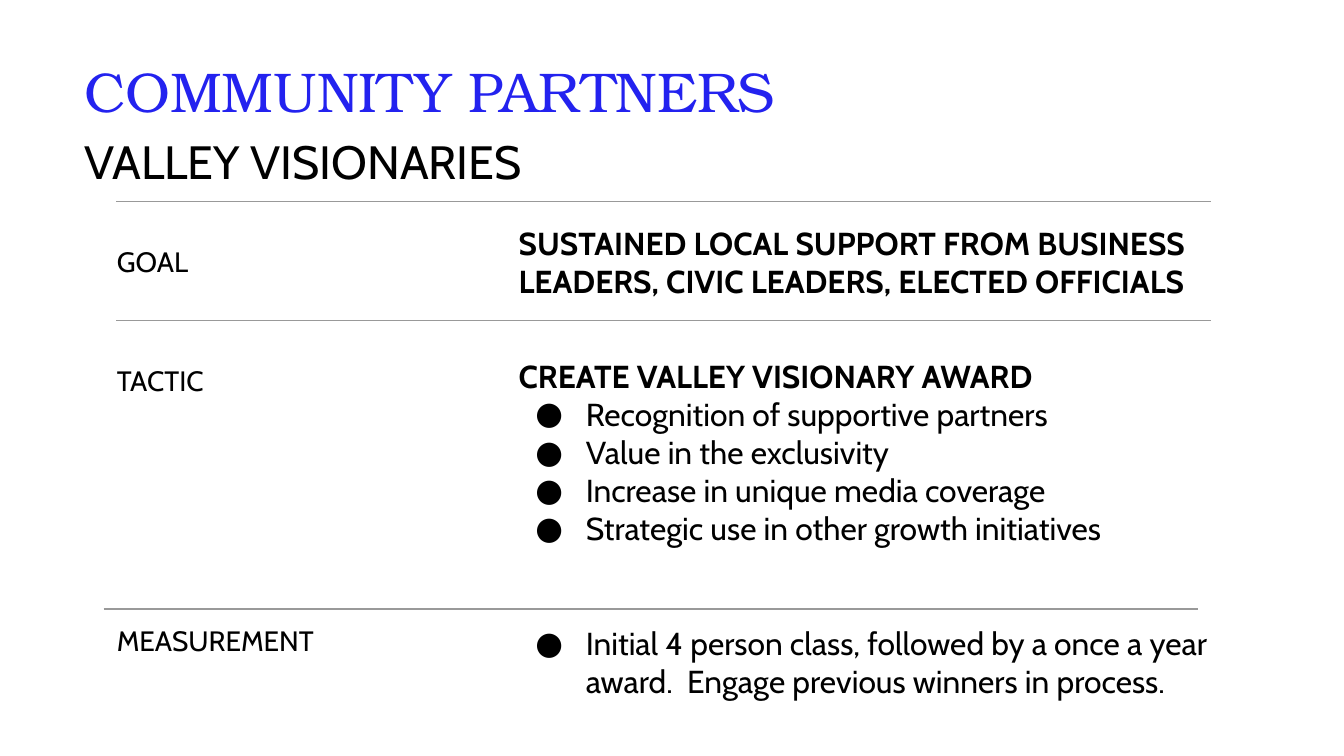
from lxml import etree
from pptx import Presentation
from pptx.dml.color import RGBColor
from pptx.enum.shapes import MSO_CONNECTOR
from pptx.enum.text import MSO_ANCHOR, MSO_AUTO_SIZE, PP_ALIGN
from pptx.oxml.ns import qn
from pptx.util import Emu, Pt

STRAIGHT = MSO_CONNECTOR.STRAIGHT
TOP = MSO_ANCHOR.TOP
LEFT = PP_ALIGN.LEFT
NO_AUTOFIT = MSO_AUTO_SIZE.NONE

BLACK = RGBColor(0x00, 0x00, 0x00)
BLUE = RGBColor(0x23, 0x22, 0xEF)
GREY = RGBColor(0x99, 0x99, 0x99)
BODY_FONT = "Cabin"
TITLE_FONT = "TeX Gyre Bonum"
BULLET_FONT = "Cabin"

LABEL_X, DETAIL_X = 74, 361
LABEL_SIZE, DETAIL_SIZE = 15, 17
RULE_WIDTH = 782
INSET = Pt(7.2)


def px(n):
    """Turn px, 96 to the inch, into EMU."""
    return Emu(n * 9525)


def place(sp, x, y, w, h):
    """Set a text shape's box, with even insets and text from the top."""
    sp.left, sp.top, sp.width, sp.height = px(x), px(y), px(w), px(h)
    tf = sp.text_frame
    tf.word_wrap = True
    tf.auto_size = NO_AUTOFIT
    tf.vertical_anchor = TOP
    tf.margin_left = tf.margin_right = tf.margin_top = tf.margin_bottom = INSET
    return tf


def add_bullet(p):
    pPr = p._p.get_or_add_pPr()
    pPr.set("marL", str(px(48)))
    pPr.set("indent", str(-px(36)))
    color = etree.SubElement(pPr, qn("a:buClr"))
    etree.SubElement(color, qn("a:srgbClr"), val=str(BLACK))
    etree.SubElement(pPr, qn("a:buFont"), typeface=BULLET_FONT)
    etree.SubElement(pPr, qn("a:buChar"), char="●")


def write(p, text, size, font=BODY_FONT, color=BLACK, bold=False):
    p.alignment = LEFT
    r = p.add_run()
    r.text = text
    r.font.name = font
    r.font.size = Pt(size)
    r.font.bold = bold
    r.font.color.rgb = color


def add_text(s, box, text, size):
    tf = place(s.shapes.add_textbox(0, 0, 0, 0), *box)
    write(tf.paragraphs[0], text, size)


def add_detail(s, y, w, h, heading=None, bullets=()):
    """Add a bold heading, bullets, or both in the right column."""
    tf = place(s.shapes.add_textbox(0, 0, 0, 0), DETAIL_X, y, w, h)
    p = tf.paragraphs[0]
    if heading:
        write(p, heading, DETAIL_SIZE, bold=True)
    for i, text in enumerate(bullets):
        if heading or i:
            p = tf.add_paragraph()
        add_bullet(p)
        write(p, text, DETAIL_SIZE)


def add_rule(s, x, y):
    line = s.shapes.add_connector(STRAIGHT, px(x), px(y), px(x + RULE_WIDTH), px(y))
    line.line.color.rgb = GREY
    line.line.width = Pt(0.75)
    etree.SubElement(line._element.spPr, qn("a:effectLst"))


def main():
    prs = Presentation()
    prs.slide_width, prs.slide_height = px(960), px(540)
    s = prs.slides.add_slide(prs.slide_layouts[5])

    tf = place(s.shapes.title, 51, 31, 711, 55)
    write(tf.paragraphs[0], "COMMUNITY PARTNERS", 30, TITLE_FONT, BLUE)
    add_text(s, (51, 85, 512, 39), "VALLEY VISIONARIES", 25)

    for label, y in (("GOAL", 165), ("TACTIC", 250), ("MEASUREMENT", 436)):
        add_text(s, (LABEL_X, y, 214, 40), label, LABEL_SIZE)

    add_detail(s, 150, 505, 74,
               "SUSTAINED LOCAL SUPPORT FROM BUSINESS LEADERS, "
               "CIVIC LEADERS, ELECTED OFFICIALS")
    add_detail(s, 245, 567, 173, "CREATE VALLEY VISIONARY AWARD", (
        "Recognition of supportive partners",
        "Value in the exclusivity",
        "Increase in unique media coverage",
        "Strategic use in other growth initiatives",
    ))
    add_detail(s, 436, 521, 80, bullets=(
        "Initial 4 person class, followed by a once a year award.  "
        "Engage previous winners in process.",
    ))

    for x, y in ((83, 144), (83, 229), (74, 435)):
        add_rule(s, x, y)

    prs.save("out.pptx")


if __name__ == "__main__":
    main()
